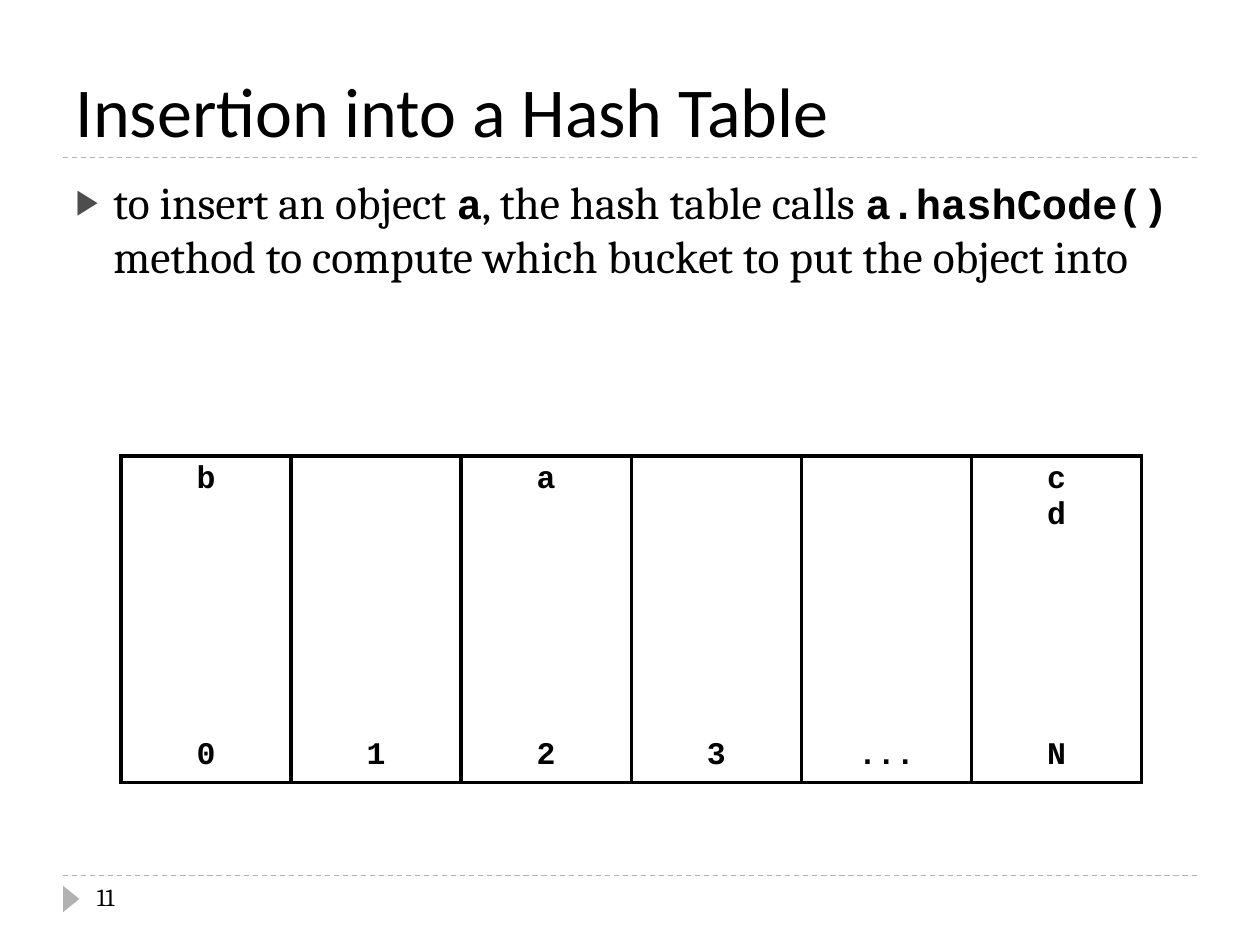
import pptx
import pptx.dml.color
import pptx.enum.dml
import pptx.enum.shapes
import pptx.enum.text
import pptx.oxml
import pptx.oxml.ns
import pptx.util
from pptx.util import Inches

TITLE = "Insertion into a Hash Table"
BODY_RUNS = [
    ("to insert an object ", "body"),
    ("a", "code"),
    (", the hash table calls ", "body"),
    ("a.hashCode()", "code"),
    (" method to compute which bucket to put the object into", "body"),
]
BUCKETS = [("0", "b"), ("1", ""), ("2", "a"), ("3", ""), ("...", ""), ("N", "c\nd")]
PAGE_NUMBER = "11"

THEME = {
    "fonts": {  # name, size, bold
        "title": ("Calibri", 40, False),
        "body": ("Cambria", 26, False),
        "code": ("Courier New", 24, True),
        "bucket": ("Courier New", 18, True),
        "page": ("Cambria", 14, False),
    },
    "text": "000000",
    "rule": "B2B2B2",
    "bullet": "4D4D4D",
    "cell": "FFFFFF",
    "border": 2.25,
}
RULE_HEIGHTS = (1.25, 6.95)
RULE_LEFT, RULE_RIGHT = 0.5, 9.5
TABLE_LEFT, TABLE_TOP = 0.96, 3.62
COLUMN_WIDTH = 1.35
ROW_HEIGHTS = (2.19, 0.4)


def color(name):
    return pptx.dml.color.RGBColor.from_string(THEME[name])


def set_font(font, style):
    font.name, size, font.bold = THEME["fonts"][style]
    font.size = pptx.util.Pt(size)
    font.color.rgb = color("text")


def place(shape, left, top, width, height):
    shape.left, shape.top = Inches(left), Inches(top)
    shape.width, shape.height = Inches(width), Inches(height)


def add_xml(parent, xml, index=None):
    element = pptx.oxml.parse_xml(
        xml.replace(">", f" {pptx.oxml.ns.nsdecls('a')}>", 1)
        if "/>" not in xml.split(">", 1)[0] + ">"
        else xml.replace("/>", f" {pptx.oxml.ns.nsdecls('a')}/>", 1))
    parent.insert(len(parent) if index is None else index, element)


def add_decoration(slide):
    for height in RULE_HEIGHTS:
        rule = slide.shapes.add_connector(
            pptx.enum.shapes.MSO_CONNECTOR.STRAIGHT,
            Inches(RULE_LEFT), Inches(height), Inches(RULE_RIGHT), Inches(height))
        rule.line.color.rgb = color("rule")
        rule.line.width = pptx.util.Pt(0.75)
        rule.line.dash_style = pptx.enum.dml.MSO_LINE.DASH
        add_xml(rule._element.spPr, "<a:effectLst/>")
    marker = slide.shapes.add_shape(
        pptx.enum.shapes.MSO_SHAPE.ISOSCELES_TRIANGLE,
        Inches(0.46), Inches(7.07), Inches(0.21), Inches(0.13))
    marker.rotation = 90
    marker.shadow.inherit = False
    marker.fill.solid()
    marker.fill.fore_color.rgb = color("rule")
    marker.line.fill.background()


def fill_title(title):
    place(title, 0.5, 0.17, 9, 1.08)
    title.text_frame.text = TITLE
    title.text_frame.auto_size = pptx.enum.text.MSO_AUTO_SIZE.NONE
    title.text_frame.vertical_anchor = pptx.enum.text.MSO_ANCHOR.BOTTOM
    paragraph = title.text_frame.paragraphs[0]
    paragraph.alignment = pptx.enum.text.PP_ALIGN.LEFT
    set_font(paragraph.font, "title")


def fill_body(body):
    place(body, 0.5, 1.33, 9, 5.4)
    body.text_frame.auto_size = pptx.enum.text.MSO_AUTO_SIZE.NONE
    paragraph = body.text_frame.paragraphs[0]
    paragraph.space_before = pptx.util.Pt(6)
    for text, style in BODY_RUNS:
        run = paragraph.add_run()
        run.text = text
        set_font(run.font, style)
    properties = paragraph._p.get_or_add_pPr()
    properties.set("marL", str(Inches(0.3)))
    properties.set("indent", str(Inches(-0.3)))
    add_xml(properties, f'<a:buClr><a:srgbClr val="{THEME["bullet"]}"/></a:buClr>')
    add_xml(properties, '<a:buSzPct val="76000"/>')
    add_xml(properties, '<a:buChar char="▶"/>')


def set_borders(cell, visible_sides):
    properties = cell._tc.get_or_add_tcPr()
    width = pptx.util.Pt(THEME["border"])
    for index, side in enumerate("LRTB"):
        paint = "<a:noFill/>"
        if side in visible_sides:
            paint = f'<a:solidFill><a:srgbClr val="{THEME["text"]}"/></a:solidFill>'
        add_xml(properties, f'<a:ln{side} w="{width}">{paint}</a:ln{side}>', index)


def add_buckets(slide):
    table = slide.shapes.add_table(
        len(ROW_HEIGHTS), len(BUCKETS), Inches(TABLE_LEFT), Inches(TABLE_TOP),
        Inches(COLUMN_WIDTH * len(BUCKETS)), Inches(sum(ROW_HEIGHTS))).table
    table.first_row = table.horz_banding = False
    for row, height in zip(table.rows, ROW_HEIGHTS):
        row.height = Inches(height)
    for column, (label, contents) in enumerate(BUCKETS):
        table.columns[column].width = Inches(COLUMN_WIDTH)
        for row, (text, sides) in enumerate([(contents, "LRT"), (label, "LRB")]):
            cell = table.cell(row, column)
            cell.text = text
            for paragraph in cell.text_frame.paragraphs:
                paragraph.alignment = pptx.enum.text.PP_ALIGN.CENTER
                set_font(paragraph.font, "bucket")
            set_borders(cell, sides)
            cell.fill.solid()
            cell.fill.fore_color.rgb = color("cell")


def add_page_number(slide):
    box = slide.shapes.add_textbox(
        Inches(0.67), Inches(6.95), Inches(2.17), Inches(0.4))
    box.text_frame.word_wrap = True
    box.text_frame.text = PAGE_NUMBER
    set_font(box.text_frame.paragraphs[0].font, "page")


def main():
    presentation = pptx.Presentation()
    presentation.slide_width, presentation.slide_height = Inches(10), Inches(7.5)
    slide = presentation.slides.add_slide(presentation.slide_layouts[1])
    add_decoration(slide)
    fill_title(slide.shapes.title)
    fill_body(slide.placeholders[1])
    add_page_number(slide)
    add_buckets(slide)
    presentation.save("out.pptx")


if __name__ == "__main__":
    main()
